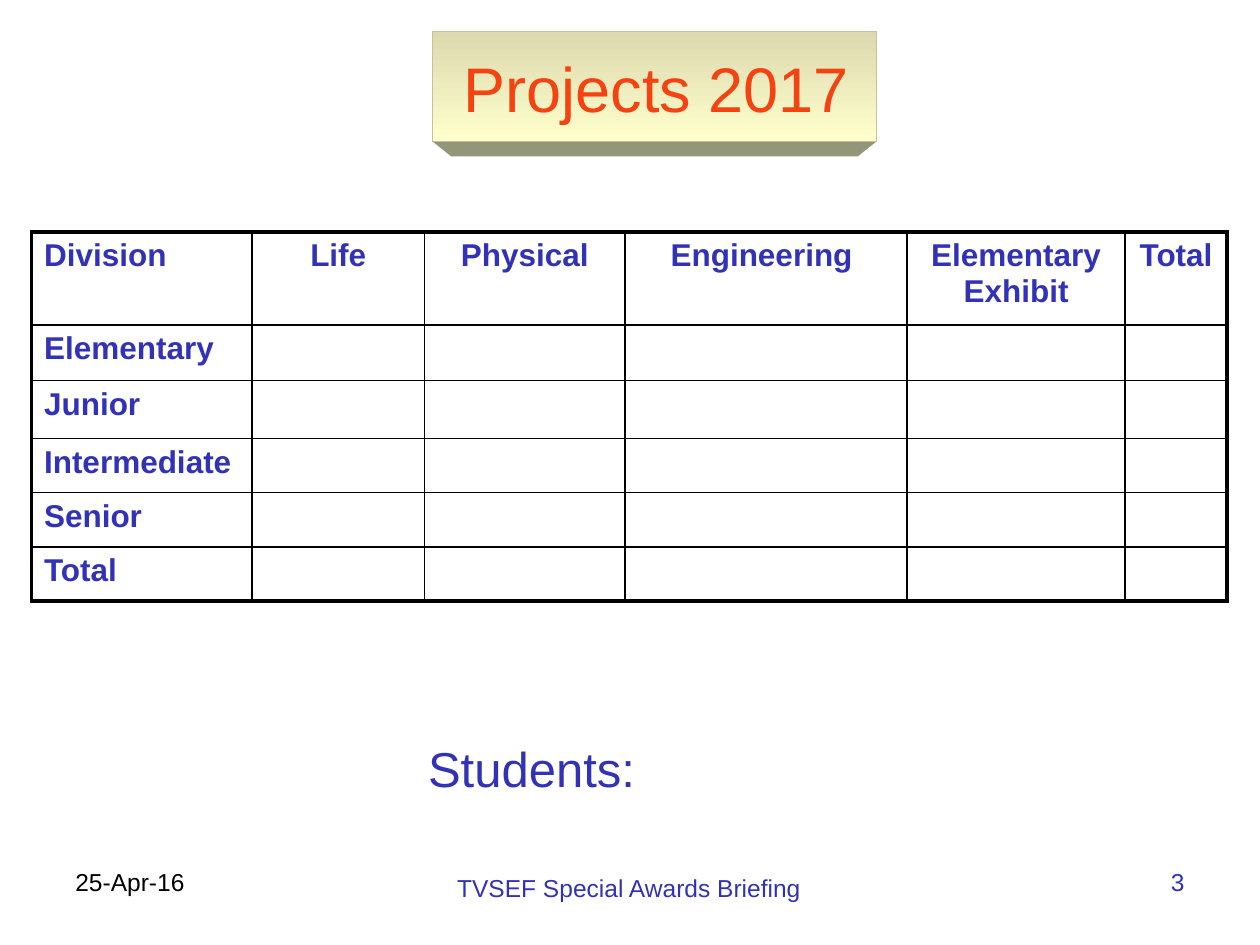
from lxml.etree import SubElement
from pptx import Presentation
from pptx.dml.color import RGBColor
from pptx.enum.shapes import MSO_SHAPE as Shape
from pptx.enum.text import MSO_ANCHOR as Anchor, PP_ALIGN as Align
from pptx.oxml.ns import qn
from pptx.util import Inches, Pt

BLUE = "3232B6"
BLACK = "000000"
HEADERS = ["Division", "Life", "Physical", "Engineering ", "Elementary Exhibit", "Total"]
DIVISIONS = ["Elementary", "Junior", "Intermediate", "Senior", "Total"]
COLUMN_WIDTHS = [1.75, 1.37, 1.59, 2.24, 1.73, 0.81]
ROW_HEIGHTS = [0.74, 0.44, 0.46, 0.43, 0.43, 0.43]


def colour(value):
    return RGBColor.from_string(value)


def inches(box):
    return [Inches(length) for length in box]


def write(frame, text, size, tint, align=Align.LEFT, bold=False):
    frame.text = text
    para = frame.paragraphs[0]
    para.alignment = align
    para.font.name = "Arial"
    para.font.size = Pt(size)
    para.font.bold = bold
    para.font.color.rgb = colour(tint)


def add_label(page, box, text, size, tint, align=Align.LEFT, wrap=True):
    frame = page.shapes.add_textbox(*inches(box)).text_frame
    frame.word_wrap = wrap
    write(frame, text, size, tint, align)


def add_title(page, box):
    left, top, width, height = box
    depth, inset = 0.12, 0.15
    bottom, right = top + height, left + width
    builder = page.shapes.build_freeform(Inches(left), Inches(bottom))
    corners = [(right, bottom), (right - inset, bottom + depth), (left + inset, bottom + depth)]
    builder.add_line_segments([inches(corner) for corner in corners], close=True)
    edge = builder.convert_to_shape()
    edge.shadow.inherit = False
    edge.fill.solid()
    edge.fill.fore_color.rgb = colour("94967A")
    edge.line.fill.background()

    panel = page.shapes.add_shape(Shape.RECTANGLE, *inches(box))
    panel.shadow.inherit = False
    panel.fill.gradient()
    panel.fill.gradient_angle = 270
    for stop, tint in zip(panel.fill.gradient_stops, ["DCD9AF", "FFFFCC"]):
        stop.color.rgb = colour(tint)
    panel.line.color.rgb = colour("C4C29C")
    panel.line.width = Pt(0.5)

    title = page.shapes.title
    title.left, title.top, title.width, title.height = inches(
        (left + 0.04, top + 0.05, width - 0.05, height - 0.09))
    frame = title.text_frame
    frame.word_wrap = True
    frame.vertical_anchor = Anchor.MIDDLE
    write(frame, "Projects 2017", 36, "F54211", Align.CENTER)
    page.shapes._spTree.append(title._element)


def add_borders(cell, widths):
    properties = cell._tc.get_or_add_tcPr()
    for side, width in widths.items():
        line = SubElement(properties, qn(f"a:ln{side}"), w=str(Pt(width)))
        SubElement(SubElement(line, qn("a:solidFill")), qn("a:srgbClr"), val=BLACK)


def add_projects_table(page, box):
    row_count, column_count = len(ROW_HEIGHTS), len(COLUMN_WIDTHS)
    frame = page.shapes.add_table(row_count, column_count, *inches(box))
    table = frame.table
    table.first_row = table.horz_banding = False
    for column, width in zip(table.columns, COLUMN_WIDTHS):
        column.width = Inches(width)
    for row, height in zip(table.rows, ROW_HEIGHTS):
        row.height = Inches(height)

    blanks = [""] * (column_count - 1)
    rows = [HEADERS] + [[division] + blanks for division in DIVISIONS]
    for r, texts in enumerate(rows):
        for c, text in enumerate(texts):
            cell = table.cell(r, c)
            align = Align.CENTER if c else Align.LEFT
            write(cell.text_frame, text, 18, BLUE, align, True)
            outer = {"L": c == 0, "R": c == column_count - 1,
                     "T": r == 0, "B": r == row_count - 1}
            add_borders(cell, {side: 2.25 if out else 1 for side, out in outer.items()})
            cell.fill.background()


def add_footer(page, box):
    left, top, width, height = box
    part = width * 0.26
    add_label(page, (left, top, part, height), "25-Apr-16", 14, BLACK)
    add_label(page, (3.53, top + 0.05, 2.95, 0.34),
              "TVSEF Special Awards Briefing", 14, BLUE, wrap=False)
    add_label(page, (left + width - part, top, part, height), "3", 14, BLUE, Align.RIGHT)


def main():
    deck = Presentation()
    deck.slide_width, deck.slide_height = Inches(10), Inches(7.5)
    page = deck.slides.add_slide(deck.slide_layouts[5])
    add_title(page, (3.43, 0.25, 3.53, 0.87))
    add_projects_table(page, (0.25, 1.84, sum(COLUMN_WIDTHS), sum(ROW_HEIGHTS)))
    add_label(page, (3.3, 5.81, 1.86, 0.57), "Students:", 28, BLUE, wrap=False)
    add_footer(page, (0.5, 6.83, 9, 0.52))
    deck.save("out.pptx")


if __name__ == "__main__":
    main()
